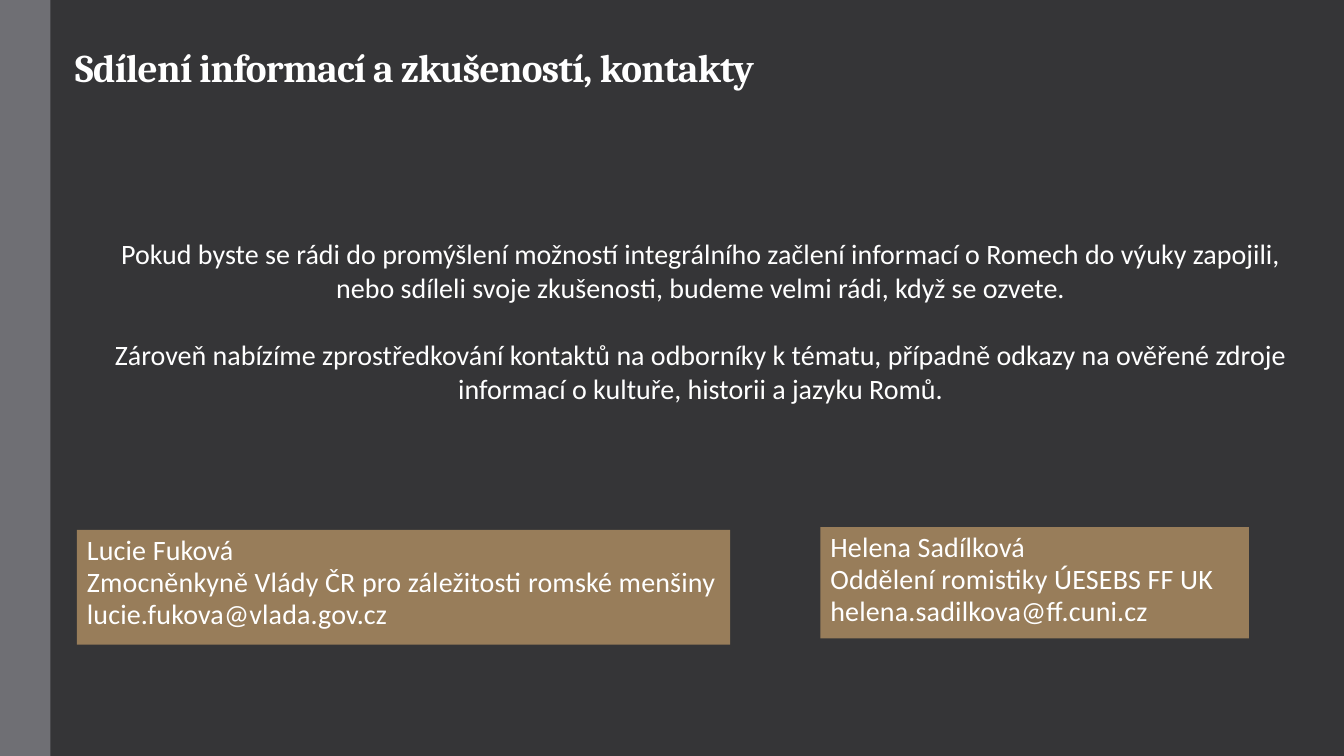
"""Build the slide on sharing information and contacts."""
from pptx import Presentation
from pptx.dml.color import RGBColor
from pptx.enum import shapes, text
from pptx.util import Pt

TITLE = "Sdílení informací a zkušeností, kontakty"
INVITATION = [
    "Pokud byste se rádi do promýšlení možností integrálního začlení informací o Romech "
    "do výuky zapojili, nebo sdíleli svoje zkušenosti, budeme velmi rádi, když se ozvete.",
    "Zároveň nabízíme zprostředkování kontaktů na odborníky k tématu, případně odkazy "
    "na ověřené zdroje informací o kultuře, historii a jazyku Romů.",
]
CONTACTS = [
    ((586, 376.5, 306, 79.5),
     ["Helena Sadílková", "Oddělení romistiky ÚESEBS FF UK", "helena.sadilkova@ff.cuni.cz"]),
    ((55, 378.5, 466.5, 82),
     ["Lucie Fuková", "Zmocněnkyně Vlády ČR pro záležitosti romské menšiny",
      "lucie.fukova@vlada.gov.cz"]),
]

WIDTH, HEIGHT = 960, 540
BACKGROUND = RGBColor(0x35, 0x35, 0x37)
BAND = RGBColor(0x6F, 0x6F, 0x74)
BRONZE = RGBColor(0x98, 0x7D, 0x5A)
WHITE = RGBColor(0xFF, 0xFF, 0xFF)


def format_paragraph(paragraph, font_name, size, alignment, bold=False, tracking=0):
    font = paragraph.font
    font.name, font.size, font.bold = font_name, Pt(size), bold
    font.color.rgb = WHITE
    paragraph.alignment = alignment
    if tracking:
        for run in paragraph.runs:
            run._r.get_or_add_rPr().set("spc", str(tracking))


def add_rectangle(slide, box, color):
    shape = slide.shapes.add_shape(shapes.MSO_SHAPE.RECTANGLE, *map(Pt, box))
    shape.shadow.inherit = False
    shape.fill.solid()
    shape.fill.fore_color.rgb = color
    shape.line.fill.background()
    return shape


def add_title(slide):
    title = slide.shapes.title
    title.left, title.top, title.width, title.height = map(Pt, (46.5, 28, 880.5, 40.5))
    frame = title.text_frame
    frame.text = TITLE
    frame.auto_size = text.MSO_AUTO_SIZE.NONE
    frame.vertical_anchor = text.MSO_ANCHOR.BOTTOM
    paragraph = frame.paragraphs[0]
    format_paragraph(paragraph, "Cambria", 28, text.PP_ALIGN.LEFT, bold=True, tracking=-50)
    paragraph.line_spacing = 0.85


def add_invitation(slide):
    frame = slide.shapes.add_textbox(*map(Pt, (73.5, 165.5, 854, 128))).text_frame
    frame.word_wrap = True
    frame.text = "\n".join(INVITATION)
    for paragraph in frame.paragraphs:
        format_paragraph(paragraph, "Calibri", 20, text.PP_ALIGN.CENTER)
    frame.paragraphs[1].space_before = Pt(24)


def add_contact(slide, box, lines):
    frame = add_rectangle(slide, box, BRONZE).text_frame
    frame.word_wrap = True
    frame.vertical_anchor = text.MSO_ANCHOR.TOP
    paragraph = frame.paragraphs[0]
    paragraph.text = "\v".join(lines)
    format_paragraph(paragraph, "Calibri", 20, text.PP_ALIGN.LEFT, tracking=10)
    paragraph.line_spacing = 0.95


def main():
    presentation = Presentation()
    presentation.slide_width, presentation.slide_height = Pt(WIDTH), Pt(HEIGHT)
    slide = presentation.slides.add_slide(presentation.slide_layouts.get_by_name("Title Only"))
    slide.background.fill.solid()
    slide.background.fill.fore_color.rgb = BACKGROUND
    add_rectangle(slide, (0, 0, 36, HEIGHT), BAND)
    add_title(slide)
    add_invitation(slide)
    for box, lines in CONTACTS:
        add_contact(slide, box, lines)
    presentation.save("out.pptx")


if __name__ == "__main__":
    main()
